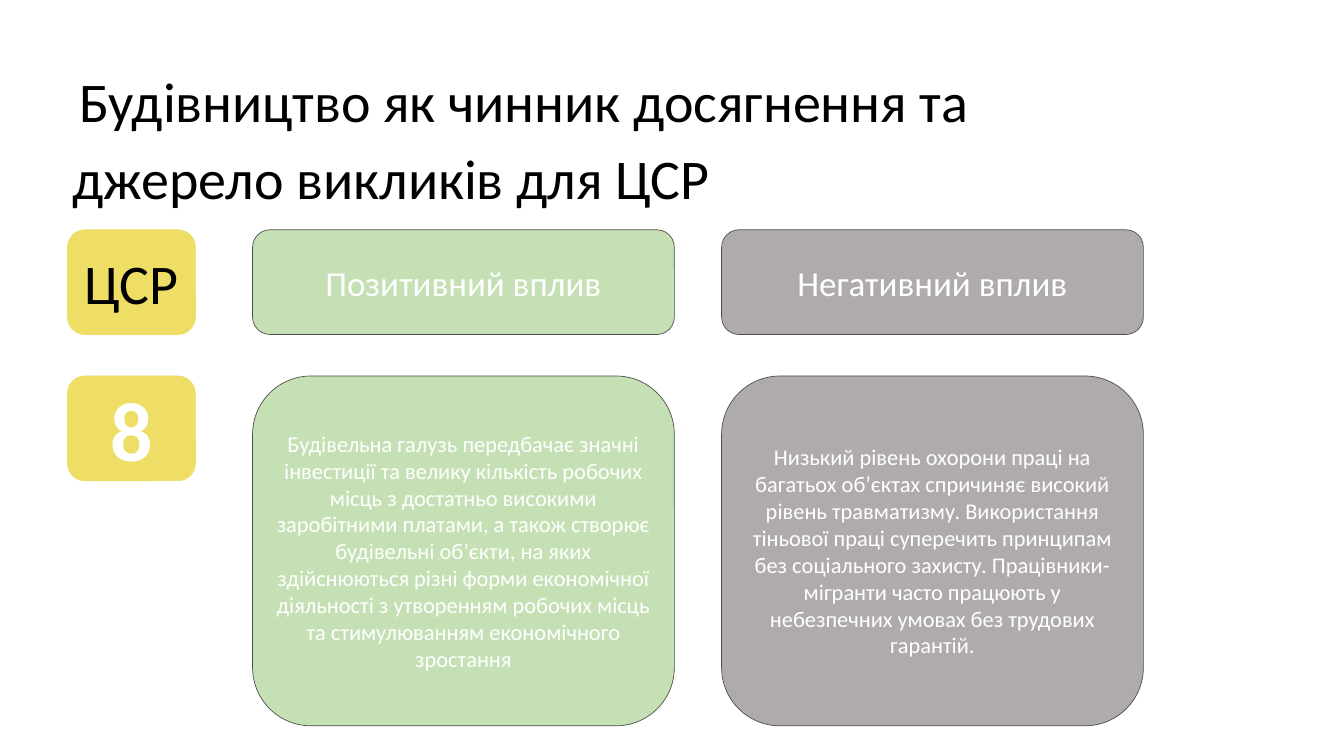
from pptx import Presentation
from pptx.dml.color import RGBColor
from pptx.enum.shapes import MSO_SHAPE
from pptx.enum.text import MSO_ANCHOR, MSO_AUTO_SIZE, PP_ALIGN
from pptx.util import Cm, Pt

ROUNDED = MSO_SHAPE.ROUNDED_RECTANGLE
MIDDLE = MSO_ANCHOR.MIDDLE
FIT_SHAPE = MSO_AUTO_SIZE.SHAPE_TO_FIT_TEXT
CENTER, LEFT = PP_ALIGN.CENTER, PP_ALIGN.LEFT

FONT = "Calibri"
WHITE, BLACK = "FFFFFF", "000000"
YELLOW, GREEN, GREY, OUTLINE = "EEDE66", "C5E0B4", "AFABAB", "4D4D4D"

# Grid in centimetres
GOAL_LEFT, GOAL_WIDTH = 3.4, 6.45
IMPACT_LEFT, IMPACT_WIDTH, IMPACT_STEP = 12.73, 21.26, 23.64
HEADER_TOP, HEADER_HEIGHT = 11.58, 5.28
BODY_TOP, BODY_HEIGHT = 18.95, 17.63

TITLE_LINES = [
    ("Будівництво як чинник досягнення та ", CENTER),
    ("джерело викликів для ЦСР", LEFT),
]
GOAL_CELLS = [
    (HEADER_TOP, "ЦСР", 80, BLACK, False),
    (BODY_TOP, "8", 120, WHITE, True),
]
IMPACTS = [
    ("Позитивний вплив", GREEN,
     "Будівельна галузь передбачає значні інвестиції та велику кількість "
     "робочих місць з достатньо високими заробітними платами, а також створює "
     "будівельні об’єкти, на яких здійснюються різні форми економічної "
     "діяльності з утворенням робочих місць та стимулюванням економічного "
     "зростання"),
    ("Негативний вплив", GREY,
     "Низький рівень охорони праці на багатьох об’єктах спричиняє високий "
     "рівень травматизму. Використання тіньової праці суперечить принципам "
     "без соціального захисту. Працівники-мігранти часто працюють у "
     "небезпечних умовах без трудових гарантій."),
]


def color(value):
    return RGBColor.from_string(value)


def add_run(paragraph, text, size, text_color, bold=False):
    run = paragraph.add_run()
    run.text = text
    run.font.name = FONT
    run.font.size = Pt(size)
    run.font.bold = bold
    run.font.color.rgb = color(text_color)


def add_card(shapes, left, top, width, height, fill, line,
             text, size, text_color=WHITE, bold=False):
    shape = shapes.add_shape(ROUNDED, Cm(left), Cm(top), Cm(width), Cm(height))
    shape.shadow.inherit = False
    shape.fill.solid()
    shape.fill.fore_color.rgb = color(fill)
    shape.line.color.rgb = color(line)
    shape.line.width = Pt(1)
    frame = shape.text_frame
    frame.word_wrap = True
    frame.vertical_anchor = MIDDLE
    paragraph = frame.paragraphs[0]
    paragraph.alignment = CENTER
    add_run(paragraph, text, size, text_color, bold)


def add_title(slide):
    box = slide.shapes.add_textbox(Cm(GOAL_LEFT), Cm(2.97), Cm(46.69), Cm(7.85))
    frame = box.text_frame
    frame.word_wrap = False
    frame.auto_size = FIT_SHAPE
    for index, (text, alignment) in enumerate(TITLE_LINES):
        paragraph = frame.add_paragraph() if index else frame.paragraphs[0]
        paragraph.alignment = alignment
        paragraph.line_spacing = 1.07
        paragraph.space_after = Pt(8)
        add_run(paragraph, text, 80, BLACK)


def main():
    presentation = Presentation()
    presentation.slide_width = Cm(67.74)
    presentation.slide_height = Cm(38.1)
    slide = presentation.slides.add_slide(presentation.slide_layouts[6])
    shapes = slide.shapes.add_group_shape().shapes

    # Goal column
    for top, text, size, text_color, bold in GOAL_CELLS:
        add_card(shapes, GOAL_LEFT, top, GOAL_WIDTH, HEADER_HEIGHT,
                 YELLOW, YELLOW, text, size, text_color, bold)

    # Impact columns: heading above explanation
    for index, (heading, fill, body) in enumerate(IMPACTS):
        left = IMPACT_LEFT + index * IMPACT_STEP
        add_card(shapes, left, HEADER_TOP, IMPACT_WIDTH, HEADER_HEIGHT,
                 fill, OUTLINE, heading, 50)
        add_card(shapes, left, BODY_TOP, IMPACT_WIDTH, BODY_HEIGHT,
                 fill, OUTLINE, body, 32)

    add_title(slide)
    presentation.save("out.pptx")


if __name__ == "__main__":
    main()
